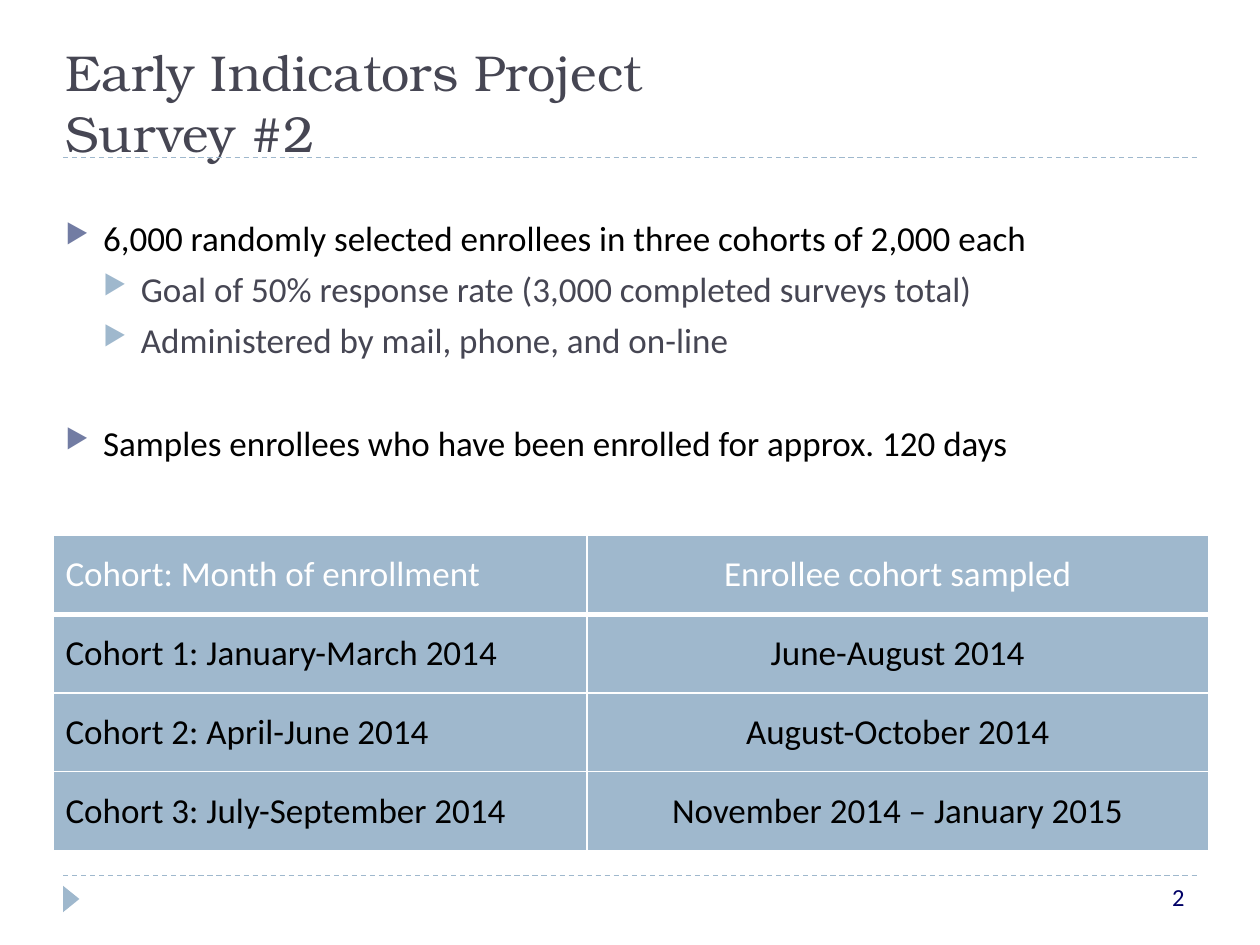
from lxml import etree
from pptx import Presentation
from pptx.dml.color import RGBColor
from pptx.enum.dml import MSO_LINE
from pptx.enum.shapes import MSO_CONNECTOR, MSO_SHAPE
from pptx.enum.text import MSO_ANCHOR, MSO_AUTO_SIZE, PP_ALIGN
from pptx.oxml.ns import qn
from pptx.util import Inches, Pt

COLORS = {
    "title": "464653",
    "text": "000000",
    "subtext": "464653",
    "accent": "727CA3",
    "soft": "9FB8CD",
    "white": "FFFFFF",
    "number": "000066",
}
TITLE_FONT, BODY_FONT = "TeX Gyre Bonum", "Calibri"

# text, level, points before
BULLETS = [
    ("6,000 randomly selected enrollees in three cohorts of 2,000 each", 0, 6),
    ("Goal of 50% response rate (3,000 completed surveys total)", 1, 5),
    ("Administered by mail, phone, and on-line", 1, 5),
    ("Samples enrollees who have been enrolled for approx. 120 days", 0, 35),
]
LEVEL_COLORS = [("text", "accent"), ("subtext", "soft")]  # text, bullet

COHORTS = [
    ("Cohort: Month of enrollment", "Enrollee cohort sampled"),
    ("Cohort 1: January-March 2014", "June-August 2014"),
    ("Cohort 2: April-June 2014", "August-October 2014"),
    ("Cohort 3: July-September 2014", "November 2014 – January 2015"),
]
COLUMN_WIDTHS = (4.24, 4.93)


def rgb(name):
    return RGBColor.from_string(COLORS[name])


def set_font(para, size, color, name=BODY_FONT):
    para.font.size = Pt(size)
    para.font.name = name
    para.font.bold = False
    para.font.color.rgb = rgb(color)


def add_rule(page, left, top, width):
    y = Inches(top)
    rule = page.shapes.add_connector(
        MSO_CONNECTOR.STRAIGHT, Inches(left), y, Inches(left + width), y)
    rule.line.color.rgb = rgb("soft")
    rule.line.width = Pt(0.75)
    rule.line.dash_style = MSO_LINE.DASH
    etree.SubElement(rule._element.spPr, qn("a:effectLst"))


def add_text_box(page, box):
    frame = page.shapes.add_textbox(*map(Inches, box)).text_frame
    frame.word_wrap = True
    return frame


def place_title(page, box):
    title = page.shapes.title
    title.left, title.top, title.width, title.height = map(Inches, box)
    frame = title.text_frame
    frame.text = "Early Indicators Project\vSurvey #2"
    frame.auto_size = MSO_AUTO_SIZE.NONE
    frame.vertical_anchor = MSO_ANCHOR.BOTTOM
    para = frame.paragraphs[0]
    para.alignment = PP_ALIGN.LEFT
    set_font(para, 28.8, "title", TITLE_FONT)


def set_bullet(para, color):
    """Give the paragraph a hanging triangle bullet, indented by its level."""
    props = para._p.get_or_add_pPr()
    props.set("marL", str(Inches(0.3 * (para.level + 1))))
    props.set("indent", str(Inches(-0.3)))
    bullet_color = etree.Element(qn("a:buClr"))
    etree.SubElement(bullet_color, qn("a:srgbClr"), val=COLORS[color])
    parts = [
        bullet_color,
        etree.Element(qn("a:buSzPct"), val="76000"),
        etree.Element(qn("a:buChar"), char="▶"),
    ]
    defaults = props.find(qn("a:defRPr"))
    for part in parts:
        defaults.addprevious(part)


def add_bullets(page, box):
    frame = add_text_box(page, box)
    for index, (text, level, before) in enumerate(BULLETS):
        para = frame.add_paragraph() if index else frame.paragraphs[0]
        para.text = text
        para.level = level
        para.space_before = Pt(before)
        text_color, bullet_color = LEVEL_COLORS[level]
        set_font(para, 20, text_color)
        set_bullet(para, bullet_color)


def set_borders(cell, bottom):
    props = cell._tc.get_or_add_tcPr()
    sides = {"lnL": 1, "lnR": 1, "lnT": 1, "lnB": bottom}
    for position, (side, width) in enumerate(sides.items()):
        line = etree.Element(qn(f"a:{side}"), w=str(Pt(width)))
        fill = etree.SubElement(line, qn("a:solidFill"))
        etree.SubElement(fill, qn("a:srgbClr"), val=COLORS["white"])
        props.insert(position, line)


def add_cohort_table(page, box):
    table = page.shapes.add_table(
        len(COHORTS), len(COLUMN_WIDTHS), *map(Inches, box)).table
    table.horz_banding = False
    for column, width in zip(table.columns, COLUMN_WIDTHS):
        column.width = Inches(width)
    for r, texts in enumerate(COHORTS):
        for c, text in enumerate(texts):
            cell = table.cell(r, c)
            cell.text = text
            cell.vertical_anchor = MSO_ANCHOR.MIDDLE
            cell.fill.solid()
            cell.fill.fore_color.rgb = rgb("soft")
            set_borders(cell, bottom=1 if r else 3)
            para = cell.text_frame.paragraphs[0]
            para.alignment = PP_ALIGN.CENTER if c else PP_ALIGN.LEFT
            set_font(para, 20, "text" if r else "white")


def add_footer(page, left, top, width):
    add_rule(page, left, top, width)
    marker = page.shapes.add_shape(
        MSO_SHAPE.ISOSCELES_TRIANGLE, Inches(left - 0.04), Inches(top + 0.12),
        Inches(0.21), Inches(0.13))
    marker.rotation = 90
    marker.shadow.inherit = False
    marker.fill.solid()
    marker.fill.fore_color.rgb = rgb("soft")
    marker.line.fill.background()

    number = add_text_box(page, (left + width - 2.5, top, 2.5, 0.4))
    para = number.paragraphs[0]
    para.text = "2"
    para.alignment = PP_ALIGN.RIGHT
    set_font(para, 14, "number")


def main():
    deck = Presentation()
    deck.slide_width, deck.slide_height = Inches(10), Inches(7.5)
    page = deck.slides.add_slide(deck.slide_layouts[5])
    add_rule(page, 0.5, 1.25, 9)
    place_title(page, (0.42, 0.42, 7.83, 0.92))
    add_bullets(page, (0.42, 1.67, 9.17, 2.42))
    add_cohort_table(page, (0.42, 4.25, 9.17, 2.5))
    add_footer(page, 0.5, 6.95, 9)
    deck.save("out.pptx")


if __name__ == "__main__":
    main()
